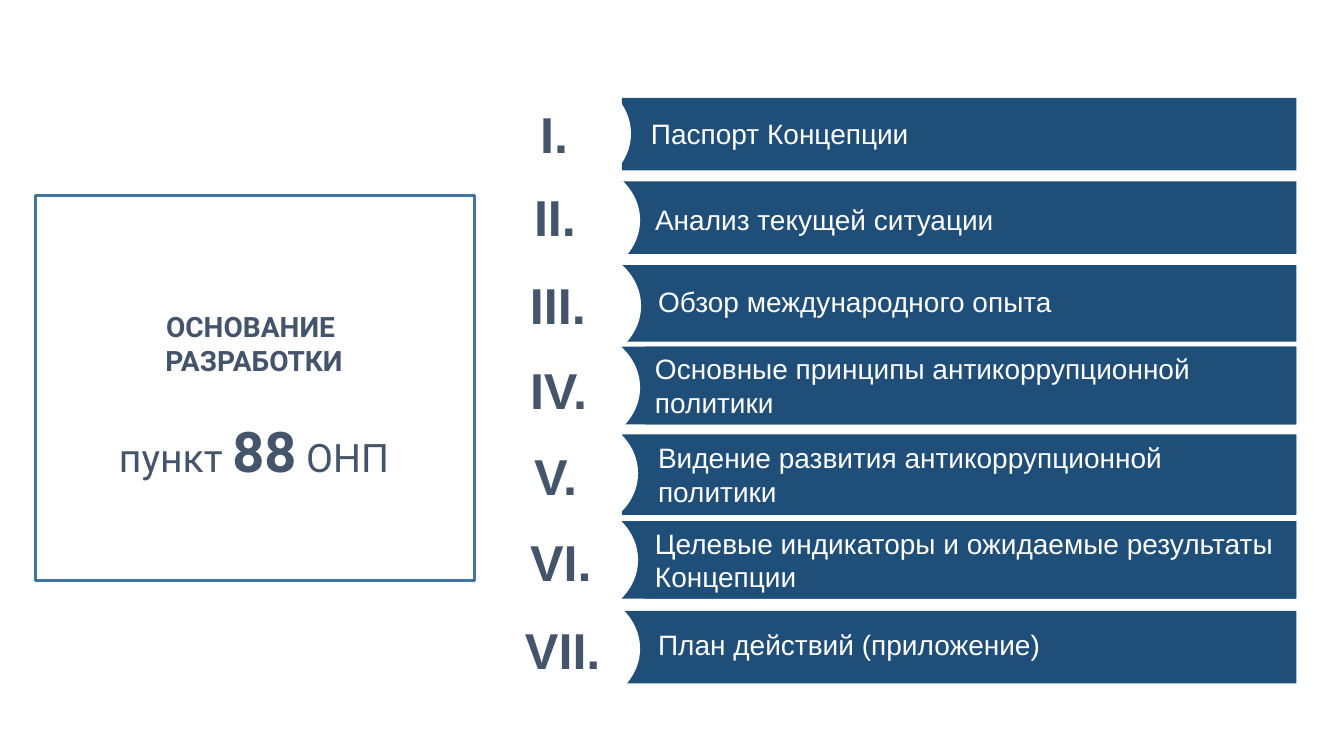
from dataclasses import dataclass
from typing import NamedTuple, Optional

from pptx import Presentation
from pptx import util as u
from pptx.dml import color
from pptx.enum import shapes, text

# Grid: 40 columns by 30 rows over a 13.33 x 7.5 inch slide
COL, ROW = u.Inches(1 / 3), u.Inches(1 / 4)
COLS, ROWS = 40, 30

COLORS = {"bar": "1F4E79", "frame": "43739E", "ink": "44546A", "white": "FFFFFF"}

BAR_LEFT, BAR_WIDTH = 18.51, 20.07
DISC_WIDTH, DISC_HEIGHT = 4.05, 4.68
NUMERAL_HEIGHT = 2.84
TITLE_HEIGHT, TWO_LINE_HEIGHT = 1.76, 3.08


class Box(NamedTuple):
    """Left and width in columns, top and height in rows."""
    left: float
    top: float
    width: float
    height: float


class Run(NamedTuple):
    words: str
    size: int
    color: str
    font: str = "Arial"
    bold: bool = False


@dataclass
class Section:
    numeral: str
    title: str
    bar_top: float
    bar_height: float
    disc: tuple[float, float]             # left, top
    numeral_at: tuple[float, float, float]  # left, top, width
    title_at: tuple[float, float, float]    # left, top, width
    two_lines: bool = False


SECTIONS = [
    Section("I.", "Паспорт Концепции", 3.88, 2.88,
            (14.73, 2.96), (15.78, 3.88, 1.92), (19.08, 4.4, 19.53)),
    Section("II.", "Анализ текущей ситуации", 7.2, 2.88,
            (15, 6.4), (15.6, 7.16, 2.91), (19.2, 7.84, 19.53)),
    Section("III.", "Обзор международного опыта", 10.52, 3.04,
            (15.03, 9.8), (15.48, 10.64, 4.08), (19.29, 11.08, 18.45)),
    Section("IV.", "Основные принципы антикоррупционной политики", 13.76, 3.08,
            (15, 13.04), (15.48, 14.04, 6.75), (19.2, 13.76, 19.38), True),
    Section("V.", "Видение развития антикоррупционной политики", 17.24, 3.2,
            (14.94, 16.44), (15.6, 17.44, 6.75), (19.29, 17.28, 19.29), True),
    Section("VI.", "Целевые индикаторы и ожидаемые результаты Концепции", 20.68, 3.08,
            (14.94, 19.88), (15.48, 20.84, 3.45), (19.2, 20.68, 19.38), True),
    Section("VII.", "План действий (приложение)", 24.24, 2.88,
            (15, 23.4), (15.33, 24.36, 3.45), (19.29, 24.68, 19.53)),
]


def rgb(name: str) -> color.RGBColor:
    return color.RGBColor.from_string(COLORS[name])


def place(box: Box) -> tuple[int, int, int, int]:
    return (round(box.left * COL), round(box.top * ROW),
            round(box.width * COL), round(box.height * ROW))


def add_shape(s, kind, box: Box, fill: Optional[str] = None, line: Optional[str] = None):
    sp = s.shapes.add_shape(kind, *place(box))
    sp.shadow.inherit = False
    if fill:
        sp.fill.solid()
        sp.fill.fore_color.rgb = rgb(fill)
    else:
        sp.fill.background()
    if line:
        sp.line.color.rgb = rgb(line)
        sp.line.width = u.Pt(2.25)
    else:
        sp.line.fill.background()
    return sp


def add_run(p, run: Run) -> None:
    r = p.add_run()
    r.text = run.words
    r.font.name, r.font.size, r.font.bold = run.font, u.Pt(run.size), run.bold
    r.font.color.rgb = rgb(run.color)


def add_text(s, box: Box, run: Optional[Run] = None, fill: Optional[str] = None):
    if fill:
        sp = add_shape(s, shapes.MSO_SHAPE.RECTANGLE, box, fill)
    else:
        sp = s.shapes.add_textbox(*place(box))
    tf = sp.text_frame
    tf.word_wrap = True
    tf.auto_size = text.MSO_AUTO_SIZE.SHAPE_TO_FIT_TEXT
    tf.vertical_anchor = text.MSO_ANCHOR.MIDDLE
    if run:
        p = tf.paragraphs[0]
        p.alignment = text.PP_ALIGN.LEFT
        add_run(p, run)
    return tf


def draw_sections(s) -> None:
    # Bars, then the white discs that cut into them
    for section in SECTIONS:
        add_shape(s, shapes.MSO_SHAPE.RECTANGLE,
                  Box(BAR_LEFT, section.bar_top, BAR_WIDTH, section.bar_height), "bar")
    for section in SECTIONS:
        add_shape(s, shapes.MSO_SHAPE.OVAL,
                  Box(*section.disc, DISC_WIDTH, DISC_HEIGHT), "white")

    # Numerals and titles
    for section in SECTIONS:
        add_text(s, Box(*section.numeral_at, NUMERAL_HEIGHT),
                 Run(section.numeral, 36, "ink", bold=True))
        height = TWO_LINE_HEIGHT if section.two_lines else TITLE_HEIGHT
        add_text(s, Box(*section.title_at, height), Run(section.title, 20, "white"),
                 "bar" if section.two_lines else None)


def draw_basis(s) -> None:
    # Heading and reference
    tf = add_text(s, Box(1.17, 12.04, 12.78, 7.4))
    p = tf.paragraphs[0]
    p.alignment = text.PP_ALIGN.CENTER
    add_run(p, Run("ОСНОВАНИЕ ", 20, "ink", "Roboto", True))
    p.add_line_break()
    add_run(p, Run("РАЗРАБОТКИ", 20, "ink", "Roboto", True))

    p = tf.add_paragraph()
    p.alignment = text.PP_ALIGN.CENTER
    p.space_before = u.Pt(28)
    for words, size, bold in (("пункт ", 28, False), ("88", 40, True), (" ОНП", 28, False)):
        add_run(p, Run(words, size, "ink", "Roboto", bold))

    # Frame
    add_shape(s, shapes.MSO_SHAPE.RECTANGLE, Box(1.05, 7.76, 13.08, 15.28), line="frame")


def main() -> None:
    prs = Presentation()
    prs.slide_width, prs.slide_height = COLS * COL, ROWS * ROW
    s = prs.slides.add_slide(prs.slide_layouts[6])
    draw_sections(s)
    draw_basis(s)
    prs.save("out.pptx")


if __name__ == "__main__":
    main()
